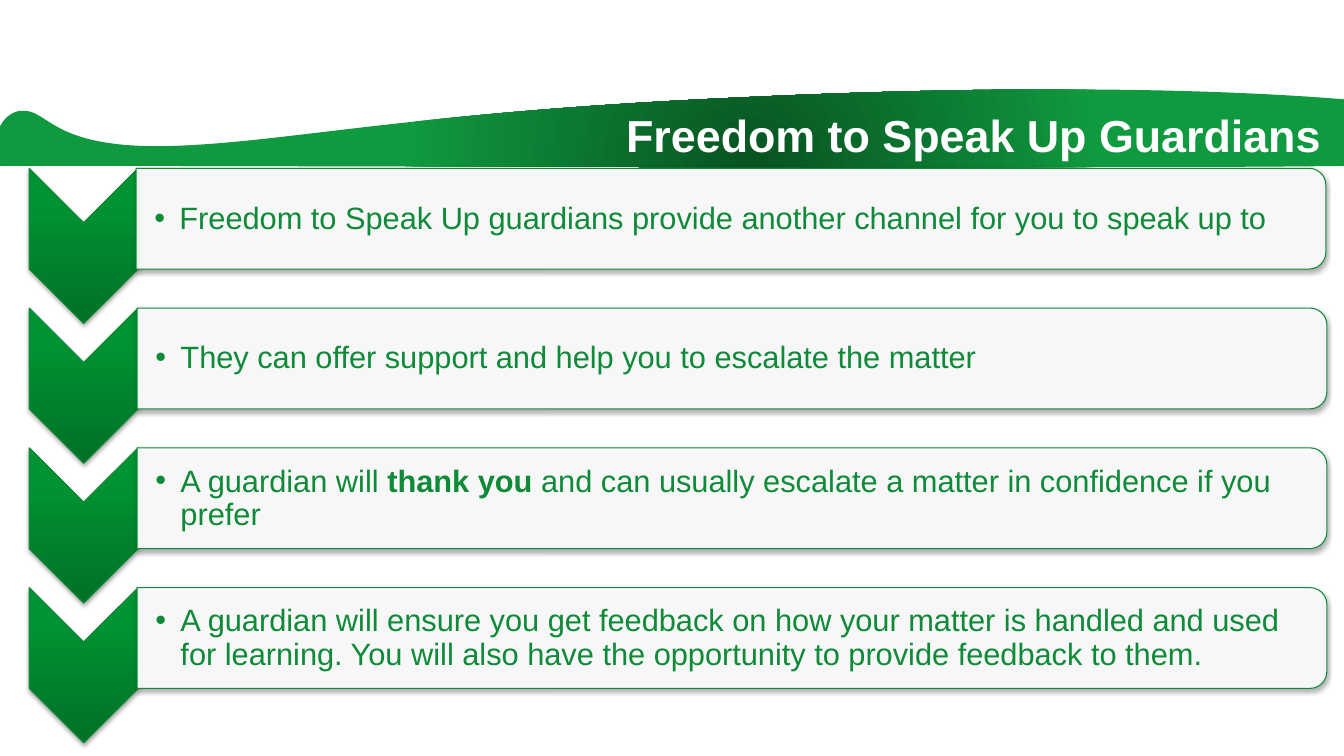
from lxml import etree
from pptx import Presentation
from pptx.dml.color import RGBColor
from pptx.enum import shapes as kinds, text as txt
from pptx.oxml import parse_xml
from pptx.oxml.ns import nsdecls
from pptx.util import Inches, Pt

GREEN = "0E8A38"


def rgb(code):
    return RGBColor.from_string(code)


def gradient(shape, stops, shade):
    """Fill a shape with (percent, colour) stops; shade is the XML of the direction."""
    shape.fill.background()
    old = shape._element.spPr.find("{*}noFill")
    marks = "".join(
        f'<a:gs pos="{pos * 1000}"><a:srgbClr val="{code}"/></a:gs>' for pos, code in stops
    )
    new = parse_xml(
        f'<a:gradFill {nsdecls("a")} rotWithShape="0"><a:gsLst>{marks}</a:gsLst>{shade}</a:gradFill>'
    )
    old.getparent().replace(old, new)


prs = Presentation()
prs.slide_width, prs.slide_height = Inches(13.33), Inches(7.5)
slide = prs.slides.add_slide(prs.slide_layouts[5])
items = slide.shapes

# Green wave: a frame whose outline becomes curves of two control points and an end
left, top, right, bottom = -0.1, 0.88, 15.05, 1.66
start = (13.71, 1.02)
curves = [
    [(12.63, 0.91), (10.58, 0.81), (7.28, 0.97)],
    [(3.99, 1.12), (2.83, 1.42), (1.65, 1.45)],
    [(0.47, 1.47), (0.49, 1.07), (0.2, 1.1)],
    [(-0.1, 1.14), (-0.07, 1.66), (-0.1, 1.65)],
    [(-0.16, 1.63), (11.35, 1.69), (13.72, 1.64)],
    [(16.09, 1.59), (14.78, 1.13), start],
]
pen = items.build_freeform(Inches(left), Inches(top))
pen.add_line_segments([(Inches(right), Inches(top)), (Inches(right), Inches(bottom))])
wave = pen.convert_to_shape()
outline = wave._element.spPr.find(".//{*}path")
for part in list(outline):
    outline.remove(part)
for kind, spots in [("moveTo", [start])] + [("cubicBezTo", curve) for curve in curves]:
    marks = "".join(
        f'<a:pt x="{Inches(x - left)}" y="{Inches(y - top)}"/>' for x, y in spots
    )
    outline.append(parse_xml(f'<a:{kind} {nsdecls("a")}>{marks}</a:{kind}>'))
outline.append(parse_xml(f'<a:close {nsdecls("a")}/>'))
wave.shadow.inherit = False
wave.line.fill.background()
gradient(
    wave,
    [(0, "7DF2A5"), (0, "085322"), (46, "109A3F")],
    '<a:path path="circle"><a:fillToRect l="50000" t="130000" r="50000" b="-30000"/></a:path>',
)
items._spTree.insert(2, wave._element)

# Title
title = items.title
title.left, title.top, title.width, title.height = map(Inches, (5.82, 0.69, 10.52, 1.3))
frame = title.text_frame
frame.text = "Freedom to Speak Up Guardians"
frame.auto_size = txt.MSO_AUTO_SIZE.NONE
frame.vertical_anchor = txt.MSO_ANCHOR.MIDDLE
frame.margin_left = frame.margin_right = Inches(0.39)
frame.margin_top = frame.margin_bottom = Inches(0.16)
para = frame.paragraphs[0]
para.alignment = txt.PP_ALIGN.LEFT
para.font.name, para.font.size, para.font.bold = "Arial", Pt(32), True
para.font.color.rgb = rgb("FFFFFF")

# Rows of chevron, panel and text; each text is a list of (words, bold)
rows = [
    [("Freedom to Speak Up guardians provide another channel for you to speak up to", False)],
    [("They can offer support and help you to escalate the matter", False)],
    [
        ("A guardian will ", False),
        ("thank you ", True),
        ("and can usually escalate a matter in confidence if you prefer", False),
    ],
    [(
        "A guardian will ensure you get feedback on how your matter is handled and used "
        "for learning. You will also have the opportunity to provide feedback to them.",
        False,
    )],
]
pitch = 4.16 / 3
for i, row in enumerate(rows):
    drop = i * pitch
    shift = 0 if i else -0.01
    chevron = items.add_shape(
        kinds.MSO_SHAPE.CHEVRON, Inches(0.06), Inches(1.9 + drop), Inches(1.54), Inches(1.08)
    )
    gradient(
        chevron,
        [(0, "007126"), (80, "009332"), (100, "009432")],
        '<a:lin ang="16200000" scaled="0"/>',
    )
    panel = items.add_shape(
        kinds.MSO_SHAPE.ROUND_2_SAME_RECTANGLE,
        Inches(6.76 + shift), Inches(drop - 3.73), Inches(1), Inches(11.8),
    )
    panel.fill.solid()
    panel.fill.fore_color.rgb = rgb("FFFFFF")
    tint = panel._element.spPr.find("{*}solidFill")[0]
    etree.SubElement(tint, tint.tag.replace("srgbClr", "alpha"), val="90000")
    for shape in (chevron, panel):
        shape.rotation = 90
        shape.line.color.rgb = rgb(GREEN)
        shape.line.width = Pt(0.75)
        shape.shadow.inherit = False
        shape._element.spPr.find("{*}effectLst").append(parse_xml(
            f'<a:outerShdw {nsdecls("a")} blurRad="40000" dist="23000" dir="5400000" '
            'rotWithShape="0"><a:srgbClr val="000000"><a:alpha val="35000"/></a:srgbClr>'
            '</a:outerShdw>'
        ))

    box = items.add_textbox(
        Inches(1.37 + shift), Inches(1.72 + drop), Inches(11.75), Inches(0.91)
    )
    frame = box.text_frame
    frame.word_wrap = True
    frame.vertical_anchor = txt.MSO_ANCHOR.MIDDLE
    frame.margin_left = Inches(0.17)
    frame.margin_top = frame.margin_right = frame.margin_bottom = Inches(0.02)
    para = frame.paragraphs[0]
    props = para._p.get_or_add_pPr()
    props.set("marL", str(Inches(0.25)))
    props.set("indent", str(Inches(-0.25)))
    props.append(parse_xml(f'<a:buFont {nsdecls("a")} typeface="Arial"/>'))
    props.append(parse_xml(f'<a:buChar {nsdecls("a")} char="•"/>'))
    para.line_spacing = 0.9
    para.font.name, para.font.size = "Arial", Pt(22)
    para.font.color.rgb = rgb(GREEN)
    for words, bold in row:
        run = para.add_run()
        run.text = words
        if bold:
            run.font.bold = True

prs.save("out.pptx")
